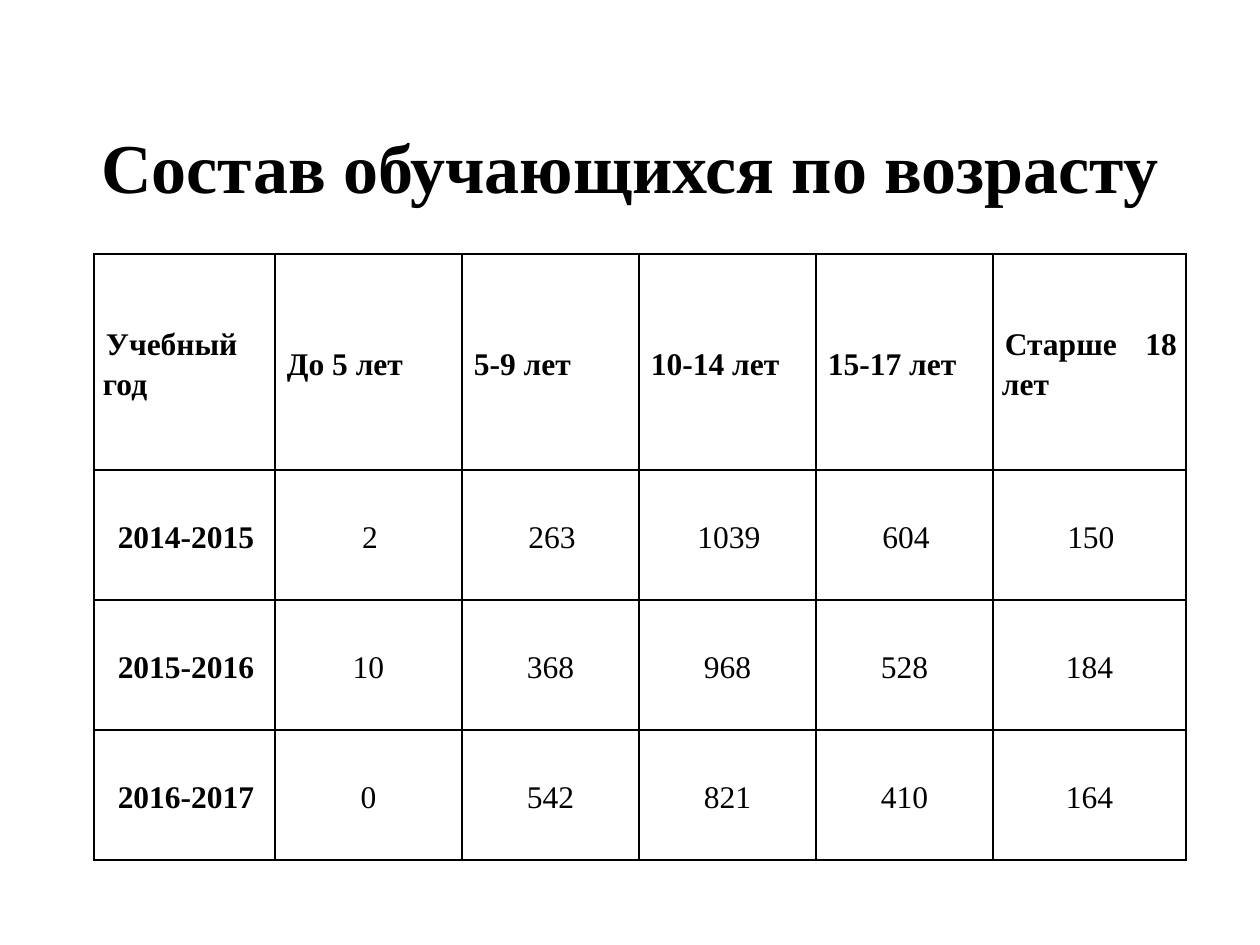
from lxml.etree import SubElement
from pptx import Presentation
from pptx.dml.color import RGBColor
from pptx.enum.text import MSO_ANCHOR, PP_ALIGN
from pptx.oxml.ns import qn
from pptx.util import Emu, Pt

BLACK = RGBColor(0, 0, 0)
FONT = "Times New Roman"
COLS = [181, 187, 177, 177, 177, 193]
ROWS = [216, 130, 130, 130]
DATA = [
    ["Учебный год", "До 5 лет", "5-9 лет", "10-14 лет", "15-17 лет", "Старше 18 лет"],
    ["2014-2015", "2", "263", "1039", "604", "150"],
    ["2015-2016", "10", "368", "968", "528", "184"],
    ["2016-2017", "0", "542", "821", "410", "164"],
]


def px(n):
    """Turn pixels at 126 to the inch into EMU."""
    return Emu(round(n * 914400 / 126))


def style(para, size, bold):
    font = para.font
    font.name, font.size, font.bold = FONT, Pt(size), bold
    font.color.rgb = BLACK


deck = Presentation()
deck.slide_width, deck.slide_height = px(1260), px(945)
slide = deck.slides.add_slide(deck.slide_layouts[5])

title = slide.shapes.title
title.left, title.top, title.width, title.height = px(63), px(76), px(1134), px(179)
frame = title.text_frame
frame.text = "Состав обучающихся по возрасту"
frame.vertical_anchor = MSO_ANCHOR.MIDDLE
frame.paragraphs[0].alignment = PP_ALIGN.CENTER
style(frame.paragraphs[0], 40, True)

table = slide.shapes.add_table(
    len(ROWS), len(COLS), px(94), px(254), px(sum(COLS)), px(sum(ROWS))
).table
table.horz_banding = False
for col, width in zip(table.columns, COLS):
    col.width = px(width)
for row, height in zip(table.rows, ROWS):
    row.height = px(height)

for r, line in enumerate(DATA):
    for c, text in enumerate(line):
        cell = table.cell(r, c)
        cell.text = text
        cell.vertical_anchor = MSO_ANCHOR.MIDDLE
        cell.margin_left = cell.margin_right = px(9)
        cell.margin_top = cell.margin_bottom = 0

        para = cell.text_frame.paragraphs[0]
        para.alignment = PP_ALIGN.CENTER if r else PP_ALIGN.JUSTIFY
        para.line_spacing = 1.15
        if r < 2 or c == 0:
            props = para._p.get_or_add_pPr()
            props.set("marL", "0")
            props.set("indent", str(px(3)))
        style(para, 18, r == 0 or c == 0)

        props = cell._tc.get_or_add_tcPr()
        for side in ("a:lnL", "a:lnR", "a:lnT", "a:lnB"):
            edge = SubElement(props, qn(side), w=str(Pt(1)))
            fill = SubElement(edge, qn("a:solidFill"))
            SubElement(fill, qn("a:srgbClr"), val=str(BLACK))
        cell.fill.background()

deck.save("out.pptx")
